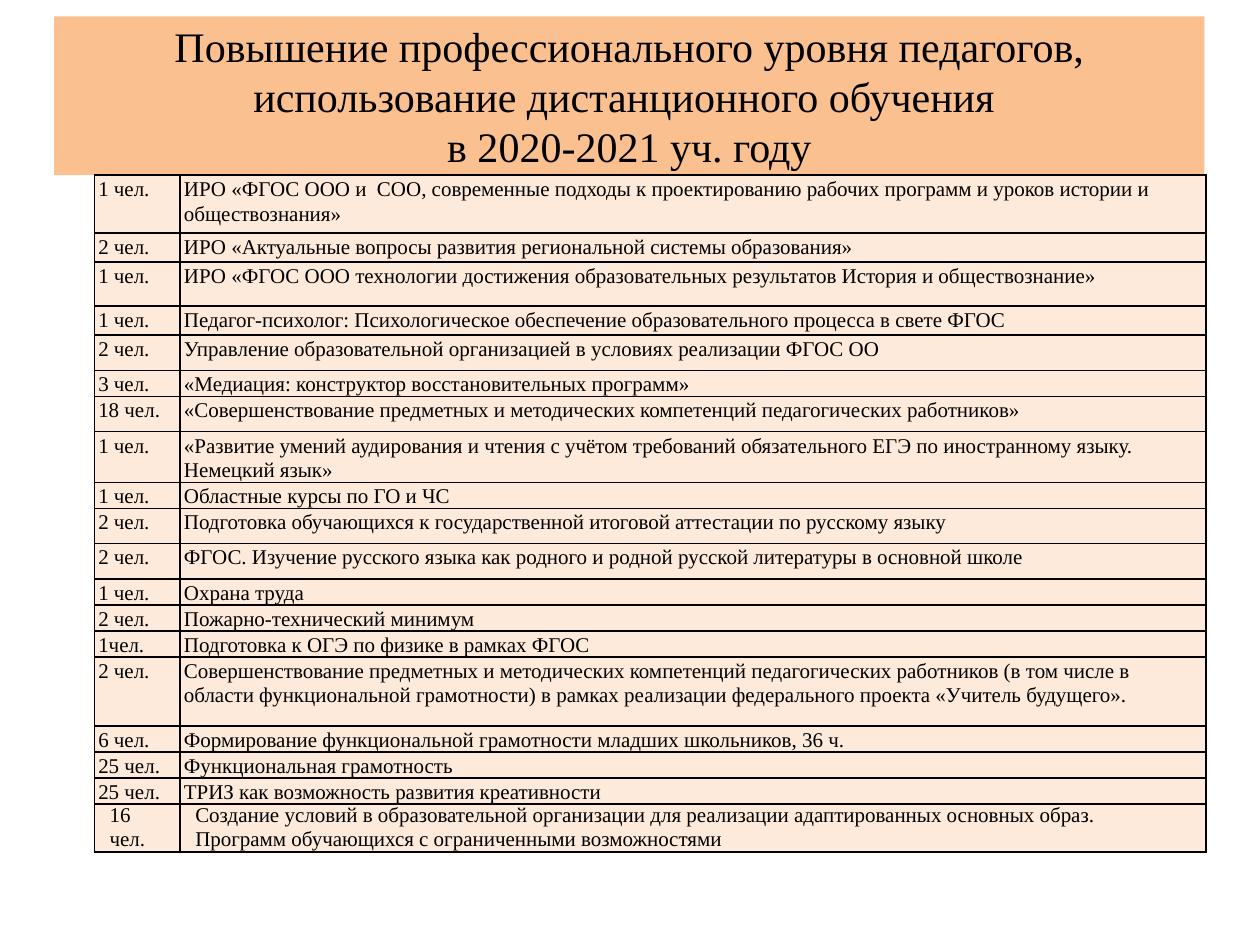
from dataclasses import dataclass
from typing import Any

from lxml import etree
from pptx import Presentation
from pptx.dml.color import RGBColor
from pptx.enum.text import MSO_ANCHOR, MSO_AUTO_SIZE, PP_ALIGN
from pptx.oxml.ns import qn
from pptx.util import Inches, Pt

CENTER = PP_ALIGN.CENTER
LEFT = PP_ALIGN.LEFT
MIDDLE = MSO_ANCHOR.MIDDLE
NO_AUTOFIT = MSO_AUTO_SIZE.NONE
TITLE_ONLY = 5
COLORS = {"banner": "FAC090", "cell": "FDEADA", "ink": "000000"}
TITLE = (
    "Повышение профессионального уровня педагогов, "
    "использование дистанционного обучения \vв 2020-2021 уч. году"
)
COLUMN_WIDTHS = (0.68, 8.14)
COURSES = [
    (0.46, "1 чел.", "ИРО «ФГОС ООО и  СОО, современные подходы к проектированию рабочих программ и уроков истории и обществознания»"),
    (0.23, "2 чел.", "ИРО «Актуальные вопросы развития региональной системы образования»"),
    (0.35, "1 чел.", "ИРО «ФГОС ООО технологии достижения образовательных результатов История и обществознание»"),
    (0.23, "1 чел.", "Педагог-психолог: Психологическое обеспечение образовательного процесса в свете ФГОС"),
    (0.28, "2 чел.", "Управление образовательной организацией в условиях реализации ФГОС ОО"),
    (0.2, "3 чел.", "«Медиация: конструктор восстановительных программ»"),
    (0.28, "18 чел.", "«Совершенствование предметных и методических компетенций педагогических работников»"),
    (0.39, "1 чел.", "«Развитие умений аудирования и чтения с учётом требований обязательного ЕГЭ по иностранному языку. Немецкий язык»"),
    (0.2, "1 чел.", "Областные курсы по ГО и ЧС"),
    (0.28, "2 чел.", "Подготовка обучающихся к государственной итоговой аттестации по русскому языку"),
    (0.28, "2 чел.", "ФГОС. Изучение русского языка как родного и родной русской литературы в основной школе"),
    (0.2, "1 чел.", "Охрана труда"),
    (0.2, "2 чел.", "Пожарно-технический минимум"),
    (0.2, "1чел.", "Подготовка к ОГЭ по физике в рамках ФГОС"),
    (0.55, "2 чел.", "Совершенствование предметных и методических компетенций педагогических работников (в том числе в области функциональной грамотности) в рамках реализации федерального проекта «Учитель будущего»."),
    (0.2, "6 чел.", "Формирование функциональной грамотности младших школьников, 36 ч."),
    (0.2, "25 чел.", "Функциональная грамотность"),
    (0.2, "25 чел.", "ТРИЗ как возможность развития креативности"),
    (0.38, "16 чел.", "Создание условий в образовательной организации для реализации адаптированных основных образ. Программ обучающихся с ограниченными возможностями"),
]


def write_text(frame, text, font, size, color, align=LEFT, spacing=None, after=None):
    """Put formatted text into a text frame."""
    frame.text = text
    for para in frame.paragraphs:
        para.alignment = align
        if spacing is not None:
            para.line_spacing = spacing
        if after is not None:
            para.space_after = Pt(after)
        for span in para.runs:
            span.font.name = font
            span.font.size = Pt(size)
            span.font.color.rgb = RGBColor.from_string(color)


@dataclass
class SlideBuilder:
    """Hold the style and the current slide."""

    page: Any
    colors: dict
    font: str = "Times New Roman"

    def add_title(self, text, left, top, width, height):
        """Place and format the title banner."""
        box = self.page.shapes.title
        box.left, box.top = Inches(left), Inches(top)
        box.width, box.height = Inches(width), Inches(height)
        box.fill.solid()
        box.fill.fore_color.rgb = RGBColor.from_string(self.colors["banner"])
        frame = box.text_frame
        frame.word_wrap = True
        frame.auto_size = NO_AUTOFIT
        frame.vertical_anchor = MIDDLE
        write_text(frame, text, self.font, 24, self.colors["ink"], align=CENTER)

    def add_border(self, cell, width=1):
        """Draw a solid line on every side of a cell."""
        properties = cell._tc.get_or_add_tcPr()
        for index, side in enumerate(("a:lnL", "a:lnR", "a:lnT", "a:lnB")):
            line = etree.Element(qn(side), w=str(Pt(width)))
            fill = etree.SubElement(line, qn("a:solidFill"))
            etree.SubElement(fill, qn("a:srgbClr"), val=self.colors["ink"])
            properties.insert(index, line)

    def add_cell(self, cell, text, is_last):
        """Fill, frame and write one table cell."""
        side = Inches(0.12 if is_last else 0.03)
        cell.margin_left = cell.margin_right = side
        cell.margin_top = Inches(0 if is_last else 0.01)
        cell.margin_bottom = 0
        cell.fill.solid()
        cell.fill.fore_color.rgb = RGBColor.from_string(self.colors["cell"])
        self.add_border(cell)
        spacing, after = (None, None) if is_last else (1.06, 8)
        write_text(cell.text_frame, text, self.font, 12, self.colors["ink"],
                   spacing=spacing, after=after)

    def add_courses(self, courses, widths, left, top):
        """Add the table of courses with the number of people trained."""
        height = sum(course[0] for course in courses)
        table = self.page.shapes.add_table(
            len(courses), len(widths), Inches(left), Inches(top),
            Inches(sum(widths)), Inches(height)).table
        table.first_row = table.horz_banding = False
        for column, width in zip(table.columns, widths):
            column.width = Inches(width)
        for index, (row_height, *texts) in enumerate(courses):
            row = table.rows[index]
            row.height = Inches(row_height)
            for cell, text in zip(row.cells, texts):
                self.add_cell(cell, text, is_last=index == len(courses) - 1)


def main():
    """Build the slide and save the deck."""
    deck = Presentation()
    deck.slide_width, deck.slide_height = Inches(10), Inches(7.5)
    page = deck.slides.add_slide(deck.slide_layouts[TITLE_ONLY])
    builder = SlideBuilder(page, COLORS)
    builder.add_title(TITLE, 0.43, 0.13, 9.13, 1.26)
    builder.add_courses(COURSES, COLUMN_WIDTHS, 0.75, 1.39)
    deck.save("out.pptx")


if __name__ == "__main__":
    main()
